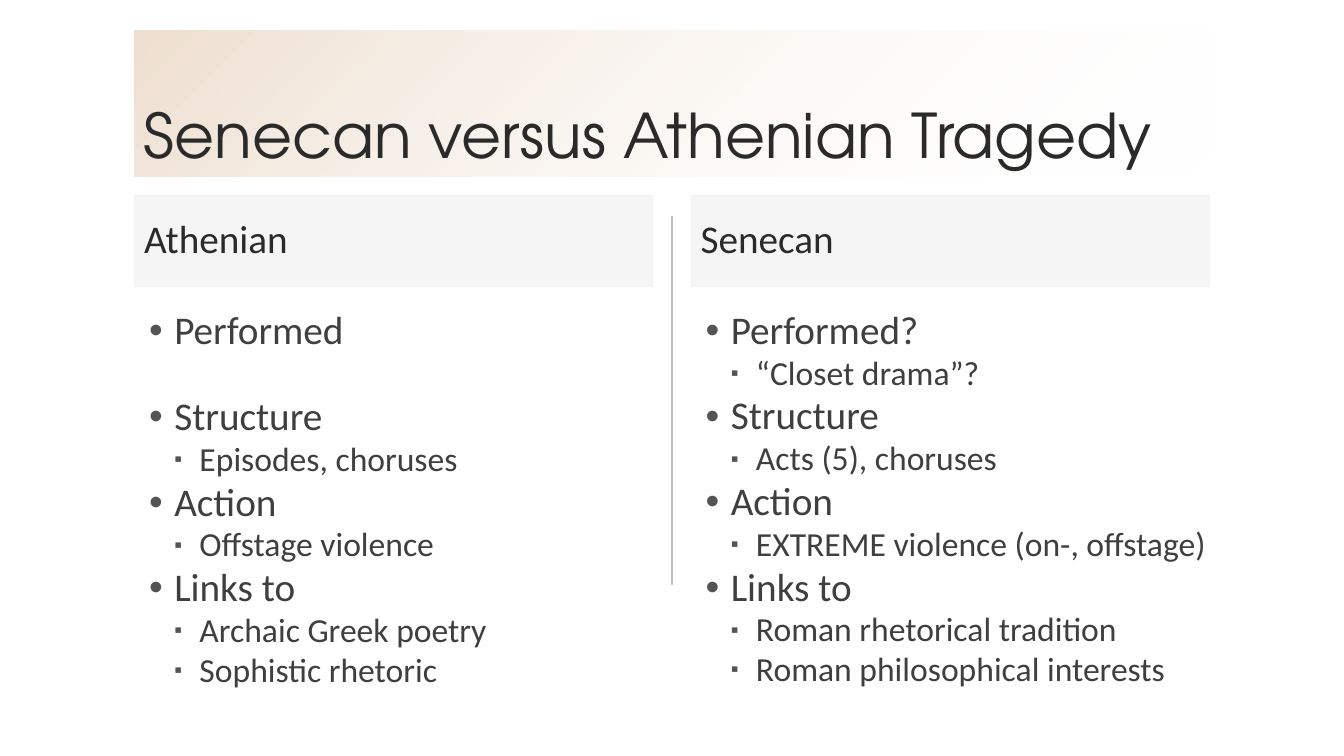
from lxml.etree import SubElement
from pptx import Presentation
from pptx.dml.color import RGBColor
from pptx.enum.shapes import MSO_CONNECTOR as Connector, MSO_SHAPE as Shape
from pptx.enum.text import MSO_ANCHOR as Anchor, PP_ALIGN as Align
from pptx.oxml.ns import qn
from pptx.util import Inches, Pt

SAND = RGBColor(0xCE, 0x9F, 0x71)
WHITE = RGBColor(0xFF, 0xFF, 0xFF)
SILVER = RGBColor(0xBF, 0xBF, 0xBF)
HEADING = RGBColor(0x2A, 0x2A, 0x2A)
BODY = RGBColor(0x3F, 0x3F, 0x3F)
BULLET = RGBColor(0x54, 0x54, 0x54)

WIDTH, HEIGHT = 13.33, 7.5
LEFT, CONTENT_WIDTH = 1.33, 10.67
COLUMN_WIDTH = 5.15
COLUMN_STEP = CONTENT_WIDTH - COLUMN_WIDTH
COLUMN_TOP, HEADER_HEIGHT, LIST_OFFSET = 1.93, 0.92, 1.07
LEVELS = [("•", 100, 0.3, 28), ("▪", 66, 0.55, 24)]
LINE_SPACING = 0.98
SKIPPED_LINE = Pt(28.7)

TITLE = "Senecan versus Athenian Tragedy"
COLUMNS = [
    ("Athenian", 5.15, [
        ("Performed", []),
        ("Structure", ["Episodes, choruses"]),
        ("Action", ["Offstage violence"]),
        ("Links to", ["Archaic Greek poetry", "Sophistic rhetoric"]),
    ]),
    ("Senecan", 5.4, [
        ("Performed?", ["“Closet drama”?"]),
        ("Structure", ["Acts (5), choruses"]),
        ("Action", ["EXTREME violence (on-, offstage)"]),
        ("Links to", ["Roman rhetorical tradition", "Roman philosophical interests"]),
    ]),
]


def set_alpha(color_element, percent):
    SubElement(color_element, qn("a:alpha"), val=str(percent * 1000))


def style(para, text, font, size, color):
    para.text = text
    para.alignment = Align.LEFT
    para.font.name, para.font.size = font, Pt(size)
    para.font.color.rgb = color


def add_banner(page, box, text, font, size, anchor):
    banner = page.shapes.add_shape(Shape.RECTANGLE, *map(Inches, box))
    banner.shadow.inherit = False
    banner.line.fill.background()
    frame = banner.text_frame
    frame.word_wrap = True
    frame.vertical_anchor = anchor
    style(frame.paragraphs[0], text, font, size, HEADING)
    frame.paragraphs[0].line_spacing = 0.9
    return banner


def add_title(page, box):
    banner = add_banner(page, box, TITLE, "TeX Gyre Adventor", 44, Anchor.BOTTOM)
    banner.fill.gradient()
    banner.fill.gradient_angle = 315
    for stop, position, color in zip(banner.fill.gradient_stops, (0, 1), (SAND, WHITE)):
        stop.position = position
        stop.color.rgb = color
    colors = banner.element.spPr.iter(qn("a:srgbClr"))
    for color_element, percent in zip(list(colors), (34, 0)):
        set_alpha(color_element, percent)


def add_bullet(para, level, text):
    mark, percent, margin, size = LEVELS[level]
    style(para, text, "Calibri", size, BODY)
    para.level = level
    para.line_spacing = LINE_SPACING
    properties = para._p.get_or_add_pPr()
    properties.set("marL", str(Inches(margin)))
    properties.set("indent", str(Inches(-0.25)))
    color = SubElement(properties, qn("a:buClr"))
    SubElement(color, qn("a:srgbClr"), val=str(BULLET))
    SubElement(properties, qn("a:buSzPct"), val=str(percent * 1000))
    SubElement(properties, qn("a:buFont"), typeface="Arial")
    SubElement(properties, qn("a:buChar"), char=mark)
    properties.append(properties.find(qn("a:defRPr")))


def add_topics(page, box, topics):
    frame = page.shapes.add_textbox(*map(Inches, box)).text_frame
    frame.word_wrap = True
    para = frame.paragraphs[0]
    for index, (topic, details) in enumerate(topics):
        if index:
            para = frame.add_paragraph()
        add_bullet(para, 0, topic)
        if not details:
            para.space_after = SKIPPED_LINE
        for detail in details:
            add_bullet(frame.add_paragraph(), 1, detail)


def add_column(page, left, top, heading, list_width, topics):
    box = (left, top, COLUMN_WIDTH, HEADER_HEIGHT)
    header = add_banner(page, box, heading, "Calibri", 28, Anchor.MIDDLE)
    header.fill.solid()
    header.fill.fore_color.rgb = SILVER
    set_alpha(next(header.element.spPr.iter(qn("a:srgbClr"))), 15)
    list_top = top + LIST_OFFSET
    add_topics(page, (left, list_top, list_width, HEIGHT - list_top), topics)


def add_divider(page, center, top, bottom):
    ends = map(Inches, (center, top, center, bottom))
    divider = page.shapes.add_connector(Connector.STRAIGHT, *ends)
    divider.line.color.rgb = SILVER
    divider.line.width = Pt(1)
    SubElement(divider.element.spPr, qn("a:effectLst"))


def main():
    deck = Presentation()
    deck.slide_width, deck.slide_height = Inches(WIDTH), Inches(HEIGHT)
    page = deck.slides.add_slide(deck.slide_layouts[6])
    add_divider(page, LEFT + CONTENT_WIDTH / 2, 2.14, 5.8)
    add_title(page, (LEFT, 0.3, CONTENT_WIDTH, 1.45))
    for index, column in enumerate(COLUMNS):
        add_column(page, LEFT + index * COLUMN_STEP, COLUMN_TOP, *column)
    deck.save("out.pptx")


if __name__ == "__main__":
    main()
